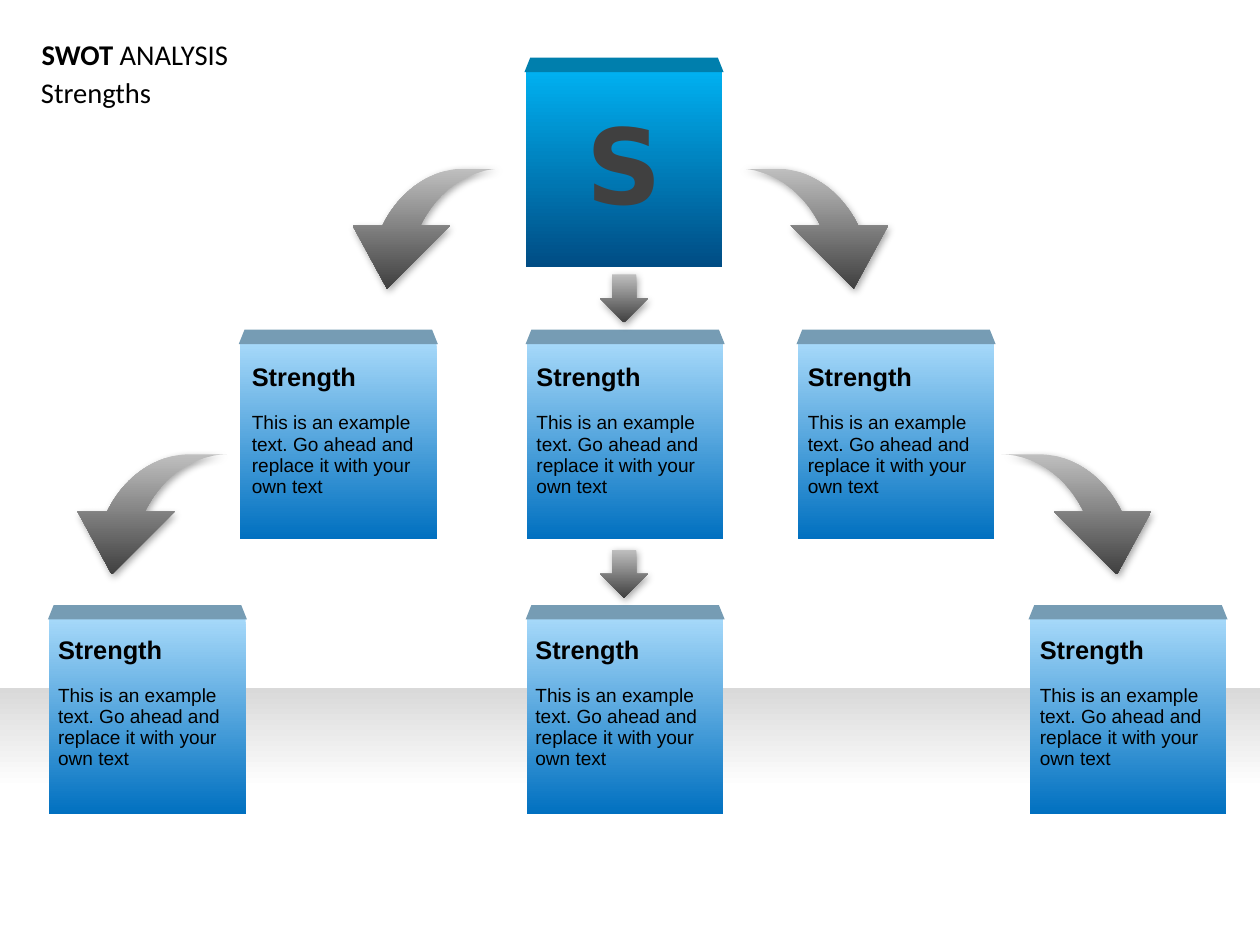
from dataclasses import dataclass

from lxml import etree
from pptx import Presentation
from pptx.dml.color import RGBColor
from pptx.enum.shapes import MSO_SHAPE
from pptx.enum.text import MSO_AUTO_SIZE
from pptx.oxml.ns import qn
from pptx.shapes.autoshape import Shape
from pptx.slide import Slide
from pptx.util import Pt

RECT = MSO_SHAPE.RECTANGLE
LID = MSO_SHAPE.TRAPEZOID
DOWN = MSO_SHAPE.DOWN_ARROW
NO_FIT = MSO_AUTO_SIZE.NONE

HUES = {
    "white": "FFFFFF", "floor": "D9D9D9", "black": "000000", "letter": "404040",
    "top": "00B0F0", "top_end": "004C84", "top_lid": "007FAD",
    "card": "A5D8F9", "card_end": "0070C0", "card_lid": "769CB4",
    "arrow": "BFBFBF", "arrow_end": "404040",
}
WIDE, HIGH = 793.75, 595.25
SIDE = 123.84
BODY = "This is an example text. Go ahead and replace it with your own text"

Point = tuple[float, float]


@dataclass
class Run:
    text: str
    size: float
    font: str
    bold: bool = False
    hue: str = "black"


@dataclass
class Line:
    runs: list[Run]
    after: float = 0


@dataclass
class Card:
    left: float
    top: float
    text_left: float
    text_top: float


@dataclass
class Bend:
    left: float
    top: float
    turn: int  # 1 bends right, -1 bends left


ROW_A, ROW_B = (216.72, 225.8), (390.24, 397.44)
CARDS = [
    Card(151.2, ROW_A[0], 151.6, ROW_A[1]),
    Card(331.92, ROW_A[0], 330.9, ROW_A[1]),
    Card(502.56, ROW_A[0], 501.84, ROW_A[1]),
    Card(30.96, ROW_B[0], 29.52, ROW_B[1]),
    Card(331.92, ROW_B[0], 330.2, ROW_B[1]),
    Card(648.72, ROW_B[0], 648, ROW_B[1]),
]
BENDS = [
    Bend(465.12, 106.2, 1), Bend(316.5, 106.2, -1),
    Bend(630.9, 286.2, 1), Bend(143.1, 286.2, -1),
]


def tint(name: str) -> RGBColor:
    return RGBColor.from_string(HUES[name])


def blend(shape: Shape, first: str, last: str, angle: int = 270, start: float = 0) -> None:
    shape.fill.gradient()
    shape.fill.gradient_angle = angle
    stops = shape.fill.gradient_stops
    stops[0].color.rgb, stops[1].color.rgb = tint(first), tint(last)
    stops[0].position, stops[1].position = start, 1


def strip(shape: Shape) -> Shape:
    shape.line.fill.background()
    shape.shadow.inherit = False
    return shape


def add_shape(slide: Slide, kind: MSO_SHAPE, left: float, top: float,
              width: float, height: float) -> Shape:
    return strip(slide.shapes.add_shape(kind, Pt(left), Pt(top), Pt(width), Pt(height)))


def paint(arrow: Shape) -> None:
    blend(arrow, "arrow", "arrow_end")
    effects = arrow._element.spPr.find(qn("a:effectLst"))
    cast = etree.SubElement(effects, qn("a:outerShdw"), blurRad=str(Pt(5)),
                            dist=str(Pt(2)), dir=str(62 * 60000), rotWithShape="0")
    color = etree.SubElement(cast, qn("a:srgbClr"), val=HUES["black"])
    etree.SubElement(color, qn("a:alpha"), val="37000")


def curve(a: Point, b: Point, c: Point, d: Point, steps: int = 24) -> list[Point]:
    points = []
    for i in range(steps + 1):
        t = i / steps
        parts = ((1 - t) ** 3, 3 * t * (1 - t) ** 2, 3 * t * t * (1 - t), t ** 3)
        points.append((sum(k * p[0] for k, p in zip(parts, (a, b, c, d))),
                       sum(k * p[1] for k, p in zip(parts, (a, b, c, d)))))
    return points


def add_text(slide: Slide, left: float, top: float, width: float, height: float,
             lines: list[Line], wrap: bool = True) -> None:
    box = slide.shapes.add_textbox(Pt(left), Pt(top), Pt(width), Pt(height))
    frame = box.text_frame
    frame.word_wrap = wrap
    frame.auto_size = NO_FIT
    for i, line in enumerate(lines):
        para = frame.add_paragraph() if i else frame.paragraphs[0]
        para.line_spacing = 0.93
        para.space_after = Pt(line.after)
        for item in line.runs:
            run = para.add_run()
            run.text = item.text
            run.font.size = Pt(item.size)
            run.font.name = item.font
            run.font.bold = item.bold
            run.font.color.rgb = tint(item.hue)


def add_cube(slide: Slide, left: float, top: float, kind: str) -> None:
    face = add_shape(slide, RECT, left, top, SIDE, SIDE - 1)
    blend(face, kind, kind + "_end")
    lid = add_shape(slide, LID, left - 0.8, top - 9, SIDE + 1.6, 9)
    lid.adjustments[0] = 0.4
    lid.fill.solid()
    lid.fill.fore_color.rgb = tint(kind + "_lid")


def add_bend(slide: Slide, bend: Bend) -> None:
    inner = curve((51.8, 36), (41, 13.7), (20.9, 0), (0, 0))
    outer = curve((23.8, 0), (44.6, 0), (64.8, 13.7), (75.6, 36))
    points = [(72.7, 75.6), (33.1, 36)] + inner + outer + [(94.3, 36)]
    spots = [(Pt(bend.left + bend.turn * x), Pt(bend.top + y)) for x, y in points]
    pen = slide.shapes.build_freeform(*spots[0])
    pen.add_line_segments(spots[1:], close=True)
    paint(strip(pen.convert_to_shape()))


def main() -> None:
    deck = Presentation()
    deck.slide_width, deck.slide_height = Pt(WIDE), Pt(HIGH)
    slide = deck.slides.add_slide(deck.slide_layouts[6])

    # Floor
    floor = add_shape(slide, RECT, 0, 433.44, WIDE, HIGH - 433.44)
    blend(floor, "white", "floor", 90, 0.61)

    # Top cube
    add_cube(slide, 331.2, 45.36, "top")
    add_text(slide, 362.16, 66.24, 60.48, 81.36,
             [Line([Run("S", 66, "DejaVu Sans", True, "letter")])])

    # Strength cards
    for card in CARDS:
        add_cube(slide, card.left, card.top, "card")
        add_text(slide, card.text_left, card.text_top, 126, 113.04, [
            Line([Run("Strength", 16, "Arial", True)], 12.8),
            Line([Run(BODY, 12, "Arial")]),
        ])

    # Arrows
    for bend in BENDS:
        add_bend(slide, bend)
    for top in (172.8, 346.32):
        paint(add_shape(slide, DOWN, 378, top, 30.24, 30.24))

    # Title
    add_text(slide, 19.08, 21.6, 133.2, 28.08,
             [Line([Run("SWOT ", 18, "Calibri", True), Run("ANALYSIS", 18, "Calibri")])], False)
    add_text(slide, 18.72, 45.36, 84.96, 28.08,
             [Line([Run("Strengths", 18, "Calibri")])], False)

    deck.save("out.pptx")


if __name__ == "__main__":
    main()
